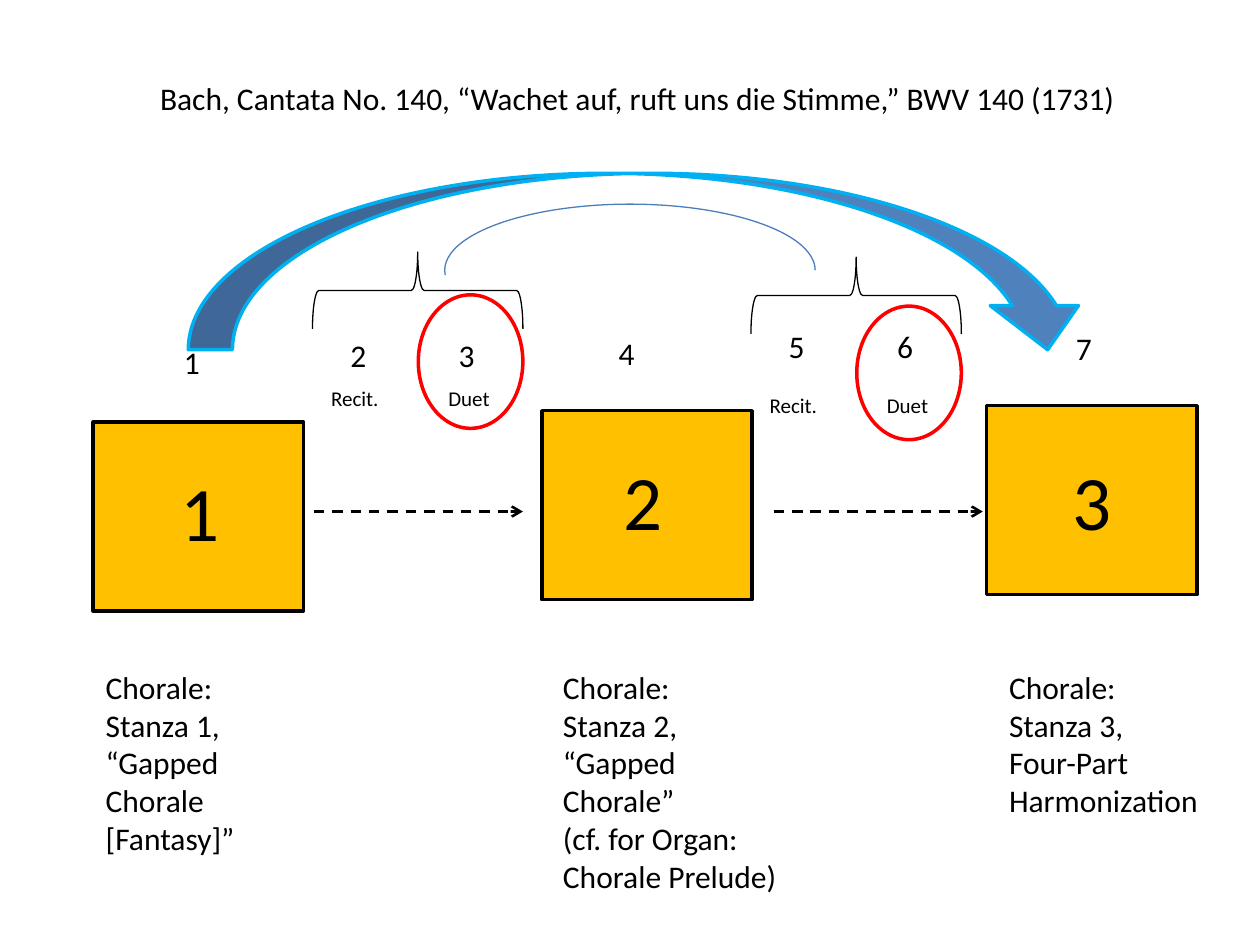
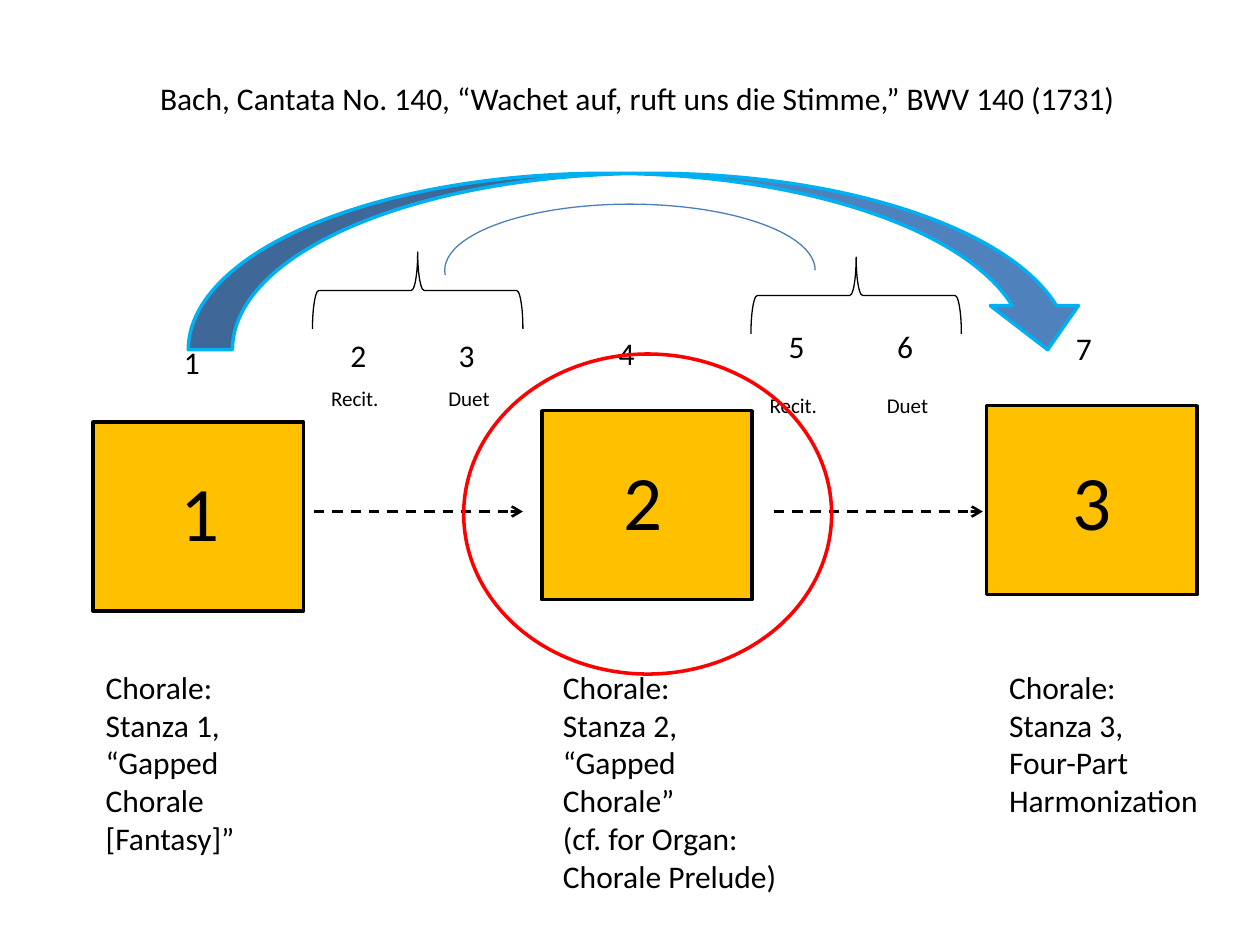
import pptx
import pptx.util
import pptx.dml.color
import pptx.enum.dml
import pptx.enum.shapes
import pptx.enum.text
import pptx.oxml
import pptx.oxml.ns
from dataclasses import dataclass

Inches, Pt = pptx.util.Inches, pptx.util.Pt
SHAPE = pptx.enum.shapes.MSO_SHAPE
ALIGN = pptx.enum.text.PP_ALIGN


@dataclass(frozen=True)
class Theme:
    font: str = "Calibri"
    ink: str = "000000"
    stanza: str = "FFC000"
    sweep: str = "4F81BD"
    sweep_edge: str = "00B0F0"
    arc: str = "4B7EBC"
    highlight: str = "FF0000"
    body: int = 18
    small: int = 12
    numeral: int = 44
    thin: float = 0.75
    medium: float = 1.5
    thick: float = 2


THEME = Theme()
WIDTH, HEIGHT = 10, 7.5

# Content (lengths in inches)
TITLE = "Bach, Cantata No. 140, “Wachet auf, ruft uns die Stimme,” BWV 140 (1731)"

# A chorale movement: number, its place and indent, square, numeral and caption places
CHORALES = [
    dict(movement="1", movement_at=(1.25, 2.67), indent=0.21, stanza="1",
         square_at=(0.74, 3.35), numeral_at=(0.92, 3.64),
         caption_at=(0.74, 5.25, 1.51, 1.62),
         caption=["Chorale:", "Stanza 1,", "“Gapped Chorale [Fantasy]”"]),
    dict(movement="4", movement_at=(4.75, 2.6), indent=0.16, stanza="2",
         square_at=(4.3, 3.26), numeral_at=(4.44, 3.55),
         caption_at=(4.37, 5.25, 1.97, 1.92),
         caption=["Chorale:", "Stanza 2,", "“Gapped Chorale”",
                  "(cf. for Organ: Chorale Prelude)"]),
    dict(movement="7", movement_at=(8.38, 2.56), indent=0.16, stanza="3",
         square_at=(7.83, 3.22), numeral_at=(8, 3.55),
         caption_at=(7.91, 5.25, 1.75, 1.31),
         caption=["Chorale:", "Stanza 3,", "Four-Part", "Harmonization"]),
]

# A recitative and duet pair: left edge, and the tops of its parts
PAIRS = [
    dict(left=2.53, movements="2\t3", numbers_top=2.62, labels_top=3.01,
         brace_top=1.47, duet_top=2.34, arrow_left=2.49),
    dict(left=6.01, movements="5\t6", numbers_top=2.55, labels_top=3.07,
         brace_top=1.51, duet_top=2.43, arrow_left=6.14),
]
PAIR_LABELS = "Recit.\tDuet"
NUMBER_TAB, LABEL_TAB = 0.86, 0.93
ARROW_TOP, ARROW_LENGTH = 4.06, 1.66

# The ringed parts of each slide
DUET_RINGS = [(pair["left"] + 0.79, pair["duet_top"], 0.83, 1.06) for pair in PAIRS]
STANZA_RING = [(3.68, 2.81, 2.92, 2.54)]
SLIDE_RINGS = [DUET_RINGS, STANZA_RING]


# Helpers
def assign(target, formats):
    for name, value in formats.items():
        setattr(target, name, value)


def rgb(colour):
    return pptx.dml.color.RGBColor.from_string(colour)


def write(holder, lines, size=THEME.body, align=ALIGN.LEFT, indent=0.1, tab=None):
    frame = holder.text_frame
    frame.text = "\n".join(lines)
    assign(frame, dict(word_wrap=True, margin_left=Inches(indent),
                       vertical_anchor=pptx.enum.text.MSO_ANCHOR.TOP,
                       auto_size=pptx.enum.text.MSO_AUTO_SIZE.SHAPE_TO_FIT_TEXT))
    for paragraph in frame.paragraphs:
        paragraph.alignment = align
        for run in paragraph.runs:
            assign(run.font, dict(name=THEME.font, size=Pt(size)))
            run.font.color.rgb = rgb(THEME.ink)
        if tab:
            paragraph._p.get_or_add_pPr().append(pptx.oxml.parse_xml(
                f'<a:tabLst {pptx.oxml.ns.nsdecls("a")}>'
                f'<a:tab pos="{Inches(tab)}" algn="l"/></a:tabLst>'))


def add_text(slide, at, lines, **formats):
    write(slide.shapes.add_textbox(*map(Inches, at)), lines, **formats)


def add_outline(slide, kind, at, colour, weight, fill=None, rotation=0):
    outline = slide.shapes.add_shape(kind, *map(Inches, at))
    outline.shadow.inherit = False
    outline.rotation = rotation
    if fill:
        outline.fill.solid()
        outline.fill.fore_color.rgb = rgb(fill)
    else:
        outline.fill.background()
    outline.line.color.rgb = rgb(colour)
    outline.line.width = Pt(weight)
    return outline


def add_dashed_arrow(slide, left, top, length):
    arrow = slide.shapes.add_connector(
        pptx.enum.shapes.MSO_CONNECTOR.STRAIGHT,
        *map(Inches, (left, top, left + length, top)))
    arrow.line.color.rgb = rgb(THEME.ink)
    assign(arrow.line, dict(width=Pt(THEME.medium),
                            dash_style=pptx.enum.dml.MSO_LINE.DASH))
    namespace = pptx.oxml.ns.nsdecls("a")
    arrow.line._get_or_add_ln().append(
        pptx.oxml.parse_xml(f'<a:tailEnd {namespace} type="arrow"/>'))
    arrow._element.spPr.append(pptx.oxml.parse_xml(f"<a:effectLst {namespace}/>"))


# Parts of the diagram
def add_title(slide):
    title = slide.shapes.title
    assign(title, dict(left=Inches(1.17), top=Inches(0.58),
                       width=Inches(8.08), height=Inches(0.4)))
    write(title, [TITLE])


def add_chorale(slide, chorale):
    add_outline(slide, SHAPE.RECTANGLE, (*chorale["square_at"], 1.67, 1.5),
                THEME.ink, THEME.thick, fill=THEME.stanza)
    add_text(slide, (*chorale["numeral_at"], 1.33, 0.84), [chorale["stanza"]],
             size=THEME.numeral, align=ALIGN.CENTER)
    add_text(slide, (*chorale["movement_at"], 0.5, 0.4), [chorale["movement"]],
             indent=chorale["indent"])
    add_text(slide, chorale["caption_at"], chorale["caption"])


def add_pair(slide, pair):
    left = pair["left"]
    add_text(slide, (left + 0.04, pair["numbers_top"], 1.58, 0.4),
             [pair["movements"]], indent=0.21, tab=NUMBER_TAB)
    add_text(slide, (left, pair["labels_top"], 1.67, 0.3),
             [PAIR_LABELS], size=THEME.small, tab=LABEL_TAB)
    add_outline(slide, SHAPE.LEFT_BRACE, (left + 0.48, pair["brace_top"], 0.61, 1.67),
                THEME.ink, THEME.thin, rotation=90)
    add_dashed_arrow(slide, pair["arrow_left"], ARROW_TOP, ARROW_LENGTH)


def add_arches(slide):
    add_outline(slide, SHAPE.CURVED_LEFT_ARROW, (4.38, -1.51, 1.4, 7.17),
                THEME.sweep_edge, THEME.thick, fill=THEME.sweep, rotation=270)
    duet_arc = add_outline(slide, SHAPE.ARC, (3.53, 1.62, 2.94, 1.05),
                           THEME.arc, THEME.thin)
    duet_arc.adjustments[0] = 107.09
    duet_arc.adjustments[1] = 0


def main():
    deck = pptx.Presentation()
    assign(deck, dict(slide_width=Inches(WIDTH), slide_height=Inches(HEIGHT)))
    title_only = deck.slide_layouts.get_by_name("Title Only")
    for rings in SLIDE_RINGS:
        slide = deck.slides.add_slide(title_only)
        add_title(slide)
        for chorale in CHORALES:
            add_chorale(slide, chorale)
        for pair in PAIRS:
            add_pair(slide, pair)
        add_arches(slide)
        for ring in rings:
            add_outline(slide, SHAPE.OVAL, ring, THEME.highlight, THEME.thick)
    deck.save("out.pptx")


if __name__ == "__main__":
    main()
